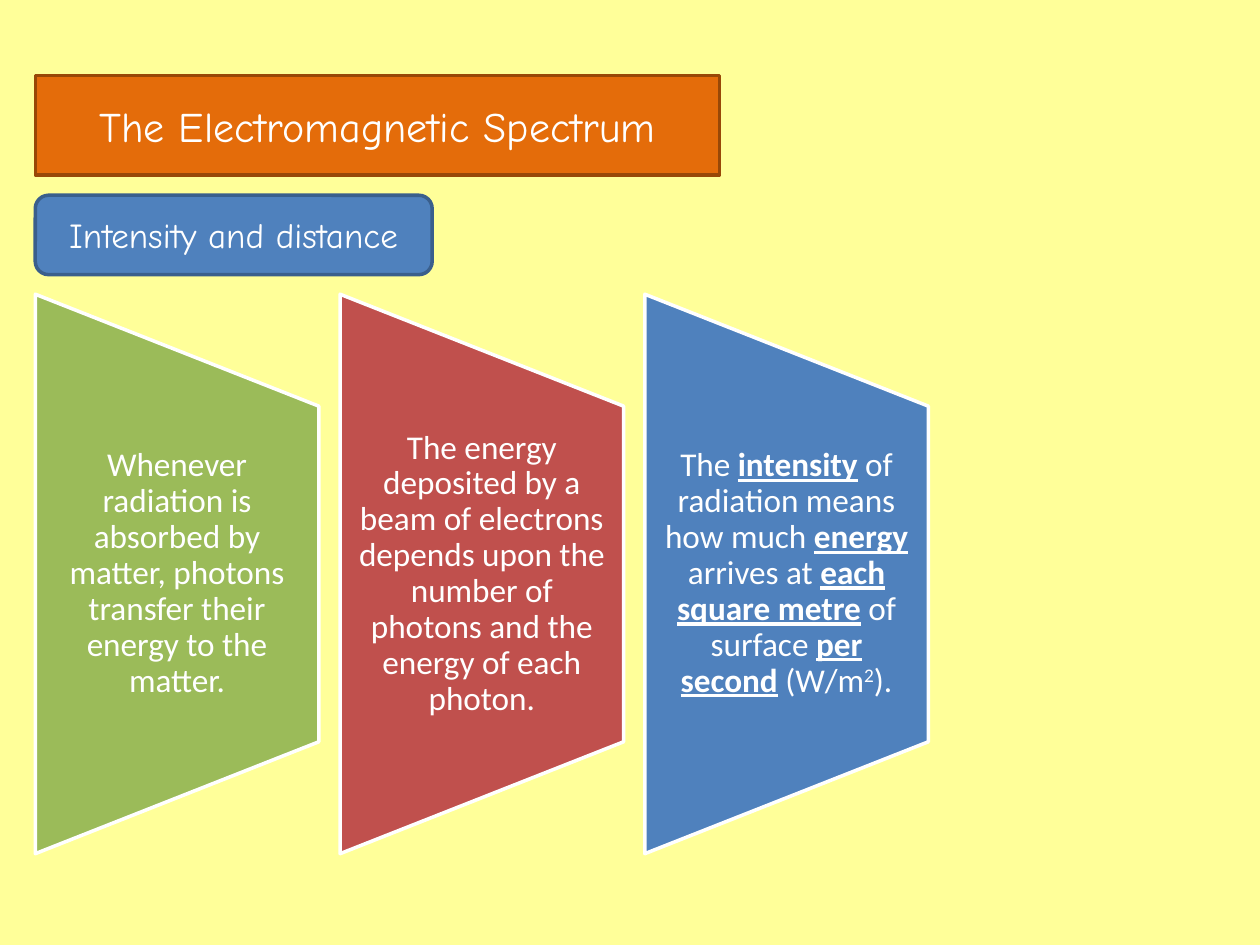
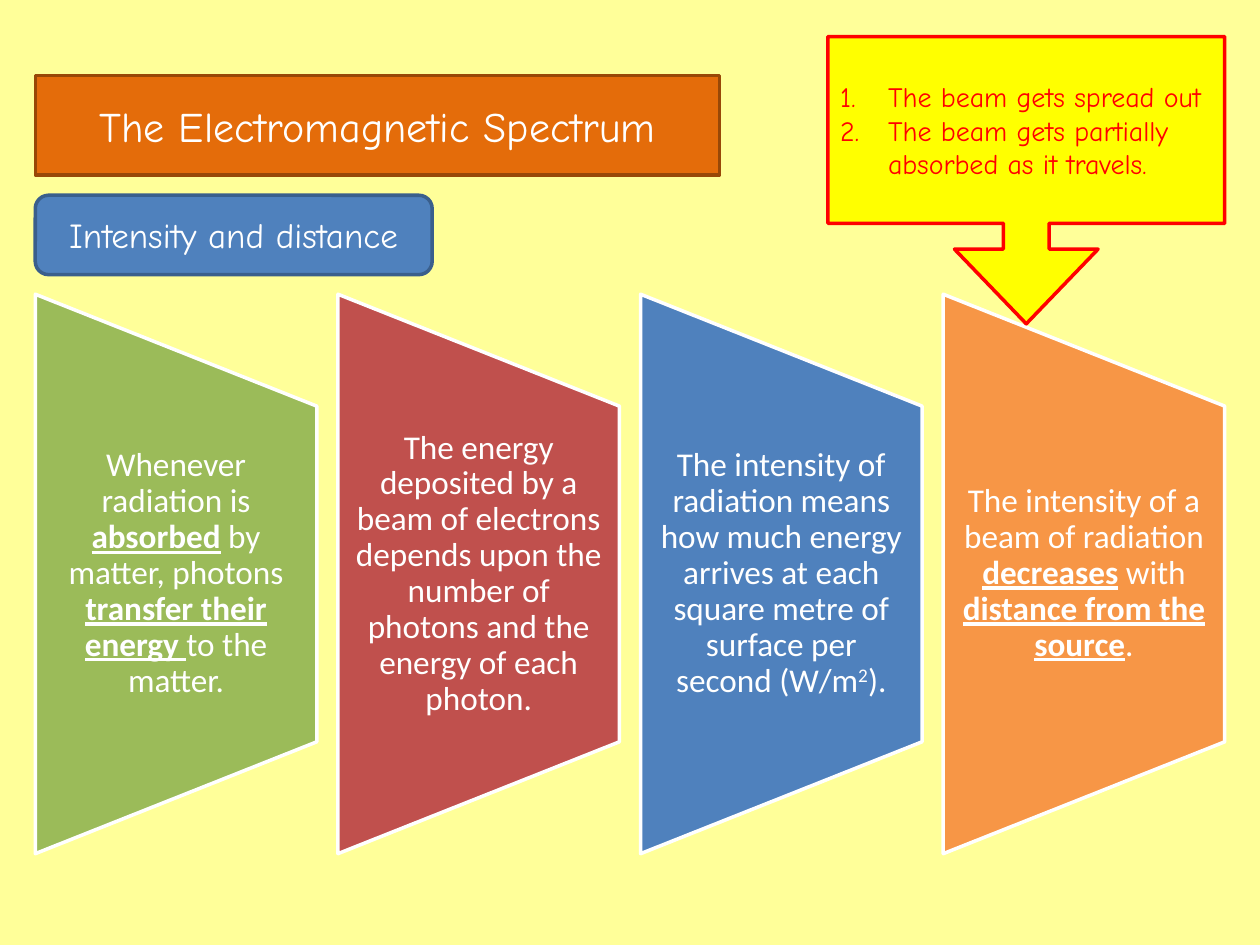
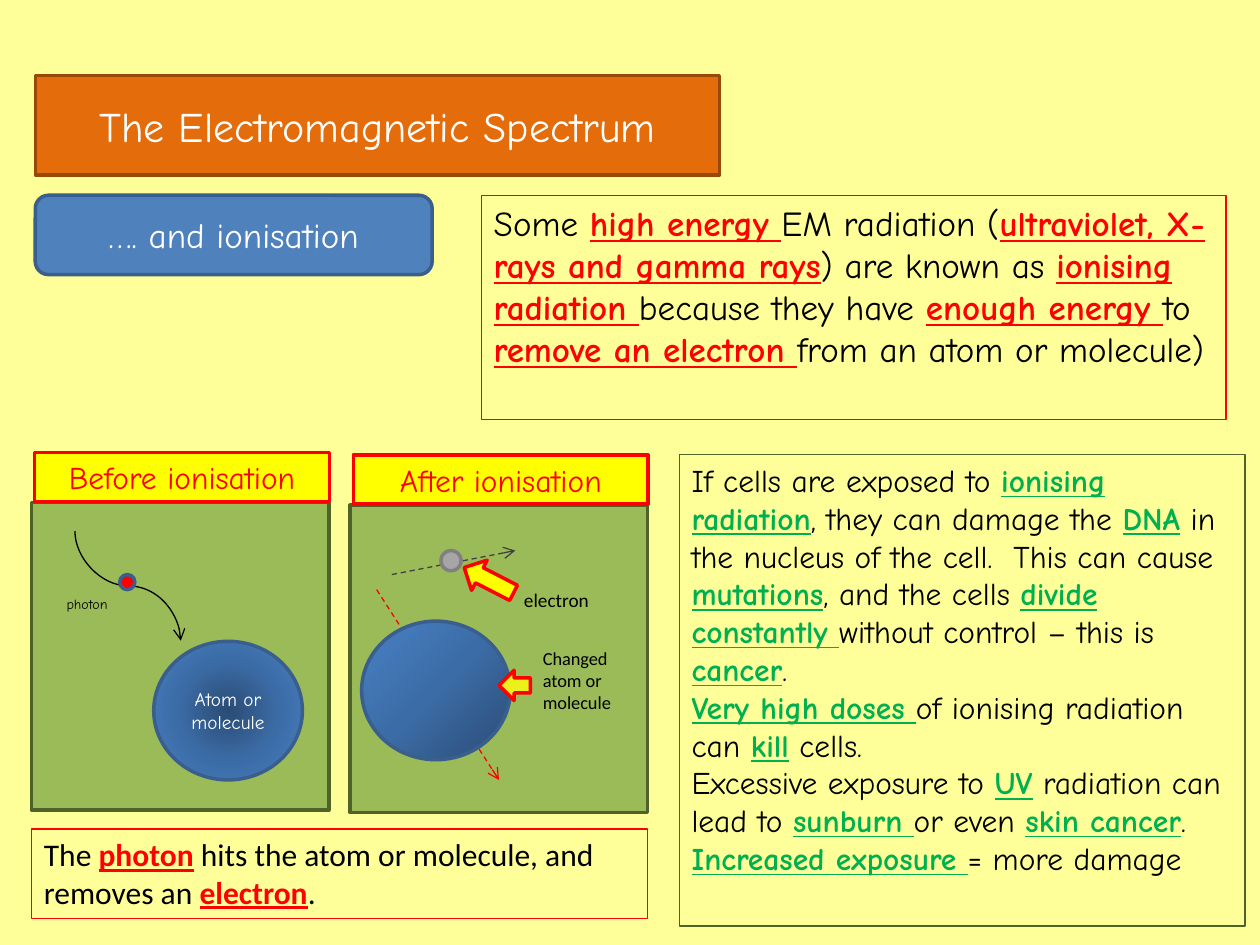
from dataclasses import dataclass

from lxml import etree
from pptx import Presentation
from pptx.dml.color import RGBColor
from pptx.enum.dml import MSO_LINE
from pptx.enum.shapes import MSO_CONNECTOR, MSO_SHAPE
from pptx.enum.text import MSO_ANCHOR, MSO_AUTO_SIZE, PP_ALIGN
from pptx.oxml import parse_xml
from pptx.oxml.ns import nsdecls, qn
from pptx.util import Inches, Pt

RECTANGLE = MSO_SHAPE.RECTANGLE
ROUNDED = MSO_SHAPE.ROUNDED_RECTANGLE
OVAL = MSO_SHAPE.OVAL
LEFT_ARROW = MSO_SHAPE.LEFT_ARROW
CALLOUT = MSO_SHAPE.DOWN_ARROW_CALLOUT
TRAPEZOID = MSO_SHAPE.FLOWCHART_MANUAL_OPERATION
STRAIGHT = MSO_CONNECTOR.STRAIGHT
CURVE = MSO_CONNECTOR.CURVE
LEFT, CENTER = PP_ALIGN.LEFT, PP_ALIGN.CENTER
TOP, MIDDLE = MSO_ANCHOR.TOP, MSO_ANCHOR.MIDDLE
TITLE_ONLY = 5


@dataclass(frozen=True)
class Theme:
    hand: str = "Comic Neue"
    plain: str = "Calibri"
    paper: str = "FFFF99"
    white: str = "FFFFFF"
    black: str = "000000"
    red: str = "FF0000"
    yellow: str = "FFFF00"
    lime: str = "ECF11B"
    title_fill: str = "E46C0A"
    title_edge: str = "984807"
    blue: str = "4F81BD"
    blue_edge: str = "3A5F8C"
    green: str = "9BBB59"
    green_edge: str = "4F6228"
    brick: str = "C0504D"
    orange: str = "F79646"
    key_green: str = "00B050"
    gray: str = "A6A6A6"
    gray_edge: str = "808080"
    track: str = "404040"
    atom_stops: tuple = ((0, "2A4C75"), (50, "3C6CA6"), (100, "4780C5"))
    title_size: float = 24
    heading_size: float = 20
    panel_size: float = 19
    body_size: float = 18
    callout_size: float = 16
    label_size: float = 11
    small_size: float = 10.5
    tiny_size: float = 8
    thick: float = 2
    thin: float = 0.75


THEME = Theme()

# The slide is a grid of 100 columns by 75 rows
COLUMNS, ROWS = 100, 75
CELL = Inches(0.1)
MARGIN = 2.8

# Sloping panels: top row, height, and the gap as a share of a panel's width
PANEL_TOP, PANEL_ROWS, PANEL_GAP = 23.35, 44.4, 0.075

# In texts, *...* marks a key phrase and ^...^ a superscript
ABSORBED = ("Whenever radiation is absorbed by matter, photons transfer "
            "their energy to the matter.")
ABSORBED_KEYS = ("Whenever radiation is *absorbed* by matter, photons "
                 "*transfer their energy *to the matter.")
DEPOSITED = ("The energy deposited by a beam of electrons depends upon the "
             "number of photons and the energy of each photon.")
INTENSITY_KEYS = ("The *intensity* of radiation means how much *energy* arrives at "
                  "*each square metre* of surface *per second* (W/m^2^).")
INTENSITY = INTENSITY_KEYS.replace("*", "")
DECREASES = ("The intensity of a beam of radiation *decreases* with "
             "*distance from the source*.")
BEAM_LOSSES = ["The beam gets spread out",
               "The beam gets partially absorbed as it travels."]
IONISING = ("Some *high energy *EM radiation (*ultraviolet, X-rays and gamma rays*) "
            "are known as *ionising radiation *because they have *enough energy *to "
            "*remove an electron *from an atom or molecule)")
PHOTON_HITS = ("The *photon* hits the atom or molecule, and removes an *electron*.")
CELL_DAMAGE = [
    "If cells are exposed to *ionising radiation*, they can damage the *DNA* in the "
    "nucleus of the cell.  This can cause *mutations*, and the cells *divide "
    "constantly *without control – this is *cancer*.",
    "*Very high doses *of ionising radiation can *kill* cells.",
    "Excessive exposure to *UV* radiation can lead to *sunburn *or even *skin cancer*.",
    "*Increased exposure *= more damage",
]


def rgb(color):
    return RGBColor.from_string(color)


def cells(*values):
    return [round(value * CELL) for value in values]


# ---- Text ----

def add_spans(para, marked, font, size, color, key_color):
    for i, phrase in enumerate(marked.split("*")):
        for j, piece in enumerate(phrase.split("^")):
            if not piece:
                continue
            span = para.add_run()
            span.text = piece
            span.font.name, span.font.size = font, Pt(size)
            span.font.color.rgb = rgb(key_color if i % 2 else color)
            if i % 2:
                span.font.bold = span.font.underline = True
            if j % 2:
                span.font._element.set("baseline", "30000")


def write(box, texts, size, color, font=THEME.hand, key_color=None,
          align=CENTER, anchor=MIDDLE):
    frame = box.text_frame
    frame.word_wrap = True
    frame.auto_size = MSO_AUTO_SIZE.NONE
    frame.vertical_anchor = anchor
    for index, marked in enumerate([texts] if isinstance(texts, str) else texts):
        para = frame.add_paragraph() if index else frame.paragraphs[0]
        para.alignment = align
        add_spans(para, marked, font, size, color, key_color or color)


def number(box, indent=Inches(0.38)):
    for para in box.text_frame.paragraphs:
        properties = para._p.get_or_add_pPr()
        properties.set("marL", str(indent))
        properties.set("indent", str(-indent))
        etree.SubElement(properties, qn("a:buFont"), typeface="+mj-lt")
        etree.SubElement(properties, qn("a:buAutoNum"), type="arabicPeriod")


# ---- Shapes ----

def paint(shape, fill, edge, width):
    if fill:
        shape.fill.solid()
        shape.fill.fore_color.rgb = rgb(fill)
    else:
        shape.fill.background()
    shape.line.color.rgb = rgb(edge)
    shape.line.width = Pt(width)


def add_box(page, kind, at, fill, edge, width=THEME.thick, rotation=0):
    shape = page.shapes.add_shape(kind, *cells(*at))
    shape.shadow.inherit = False
    shape.rotation = rotation
    paint(shape, fill, edge, width)
    return shape


def add_label(page, at, text, size, font=THEME.plain):
    label = page.shapes.add_textbox(*cells(*at))
    write(label, text, size, THEME.black, font, align=LEFT, anchor=TOP)


def add_note(page, at, texts, size, edge, key_color, font=THEME.hand):
    note = add_box(page, RECTANGLE, at, None, edge, THEME.thin)
    write(note, texts, size, THEME.black, font, key_color, LEFT, TOP)


def add_arrow(page, kind, start, end, color, dashed=False):
    arrow = page.shapes.add_connector(kind, *cells(*start, *end))
    arrow.line.color.rgb = rgb(color)
    arrow.line.width = Pt(THEME.thin)
    if dashed:
        arrow.line.dash_style = MSO_LINE.DASH
    etree.SubElement(arrow.line._get_or_add_ln(), qn("a:tailEnd"), type="arrow")
    etree.SubElement(arrow._element.spPr, qn("a:effectLst"))
    return arrow


def add_atom(page, left, top, focus):
    atom = add_box(page, OVAL, (left, top, 11.8, 11), None, THEME.blue_edge)
    stops = "".join(f'<a:gs pos="{share * 1000}"><a:srgbClr val="{color}"/></a:gs>'
                    for share, color in THEME.atom_stops)
    sides = " ".join(f'{side}="{share * 1000}"' for side, share in zip("ltrb", focus))
    gradient = parse_xml(
        f'<a:gradFill {nsdecls("a")} rotWithShape="1"><a:gsLst>{stops}</a:gsLst>'
        f'<a:path path="circle"><a:fillToRect {sides}/></a:path></a:gradFill>')
    outline = atom._element.spPr
    outline.replace(outline.find(qn("a:noFill")), gradient)
    return atom


def add_panels(page, panels, width):
    for index, (text, fill) in enumerate(panels):
        left = MARGIN + index * width * (1 + PANEL_GAP)
        # A quarter turn swaps width and height about the panel's centre
        shift = (PANEL_ROWS - width) / 2
        add_box(page, TRAPEZOID, (left - shift, PANEL_TOP + shift, PANEL_ROWS, width),
                fill, THEME.white, rotation=270)
        box = page.shapes.add_textbox(*cells(
            left, PANEL_TOP + 0.2 * PANEL_ROWS, width, 0.6 * PANEL_ROWS))
        write(box, text, THEME.panel_size, THEME.white, THEME.plain)
        frame = box.text_frame
        frame.margin_left = frame.margin_right = Inches(0.13)
        frame.margin_top = frame.margin_bottom = 0
        frame.paragraphs[0].line_spacing = 0.9


def add_scene(page, left, top, heading):
    """Green field with a yellow heading above it."""
    add_box(page, RECTANGLE, (left, top + 4, 23.6, 24.4), THEME.green, THEME.green_edge)
    banner = add_box(page, RECTANGLE, (left + 0.25, top, 23.4, 3.9),
                     THEME.yellow, THEME.red)
    write(banner, heading, THEME.body_size, THEME.red)


# ---- Slides ----

def add_page(deck, heading):
    page = deck.slides.add_slide(deck.slide_layouts[TITLE_ONLY])
    title = page.shapes.title
    title.left, title.top, title.width, title.height = cells(MARGIN, 6, 54.3, 7.9)
    title._element.spPr.append(parse_xml(
        f'<a:prstGeom {nsdecls("a")} prst="roundRect"><a:avLst/></a:prstGeom>'))
    paint(title, THEME.title_fill, THEME.title_edge, THEME.thick)
    write(title, "The Electromagnetic Spectrum", THEME.title_size, THEME.white)
    subtitle = add_box(page, ROUNDED, (MARGIN, 15.5, 31.5, 6.3),
                       THEME.blue, THEME.blue_edge)
    write(subtitle, heading, THEME.heading_size, THEME.white)
    return page


def build_intensity(deck):
    page = add_page(deck, "Intensity and distance")
    add_panels(page, [(ABSORBED, THEME.green), (DEPOSITED, THEME.brick),
                      (INTENSITY_KEYS, THEME.blue)], 22.5)


def build_distance(deck):
    page = add_page(deck, "Intensity and distance")
    panels = [(ABSORBED_KEYS, THEME.green), (DEPOSITED, THEME.brick),
              (INTENSITY, THEME.blue), (DECREASES, THEME.orange)]
    count = len(panels)
    add_panels(page, panels, (COLUMNS - 2 * MARGIN) / (count + (count - 1) * PANEL_GAP))
    callout = add_box(page, CALLOUT, (65.7, 2.9, 31.5, 22.8), THEME.yellow, THEME.red)
    for index, share in enumerate((0.16, 0.25, 0.26, 0.65)):
        callout.adjustments[index] = share
    write(callout, BEAM_LOSSES, THEME.callout_size, THEME.red, align=LEFT)
    number(callout)


def draw_before(page):
    add_scene(page, 2.5, 35.9, "Before ionisation")
    atom = add_atom(page, 12.2, 50.9, (50, 50, 50, 50))
    write(atom, "Atom or molecule", THEME.label_size, THEME.white)
    wave = add_arrow(page, CURVE, (14.5, 42.3), (5.8, 50.7), THEME.black)
    wave._element.spPr.find(qn("a:xfrm")).set("rot", str(270 * 60000))
    add_box(page, OVAL, (9.5, 45.6, 1.2, 1.2), THEME.red, THEME.blue_edge)
    add_label(page, (4.3, 46.8, 6.4, 2.4), "photon", THEME.tiny_size, THEME.hand)


def draw_after(page):
    add_scene(page, 27.8, 36.1, "After ionisation")
    add_arrow(page, STRAIGHT, (29.9, 46.8), (39.6, 61.9), THEME.red, dashed=True)
    add_atom(page, 28.7, 49.3, (100, 100, 0, 0))
    add_label(page, (42.1, 50.9, 7.9, 6.3), "Changed atom or molecule", THEME.small_size)
    add_box(page, LEFT_ARROW, (39.6, 53.2, 2.5, 2.4), THEME.lime, THEME.red)
    add_arrow(page, STRAIGHT, (31.1, 45.6), (40.9, 43.7), THEME.track, dashed=True)
    add_box(page, OVAL, (35, 43.7, 1.6, 1.6), THEME.gray, THEME.gray_edge)
    add_label(page, (40.6, 46.2, 7.9, 2.9), "electron", THEME.label_size)
    add_box(page, LEFT_ARROW, (36.6, 44.7, 4.4, 2.7), THEME.yellow, THEME.red,
            rotation=27.2)


def build_ionisation(deck):
    page = add_page(deck, "…. and ionisation")
    add_note(page, (38.2, 15.5, 59.1, 17.8), IONISING, THEME.heading_size,
             THEME.red, THEME.red)
    draw_before(page)
    draw_after(page)
    add_note(page, (2.5, 65.8, 48.9, 7.1), PHOTON_HITS, THEME.body_size,
             THEME.red, THEME.red, THEME.plain)
    add_note(page, (53.9, 36.1, 44.9, 37.4), CELL_DAMAGE, THEME.body_size,
             THEME.green_edge, THEME.key_green)


def main():
    deck = Presentation()
    deck.slide_width, deck.slide_height = cells(COLUMNS, ROWS)
    paper = deck.slide_master.background.fill
    paper.solid()
    paper.fore_color.rgb = rgb(THEME.paper)
    build_intensity(deck)
    build_distance(deck)
    build_ionisation(deck)
    deck.save("out.pptx")


if __name__ == "__main__":
    main()
